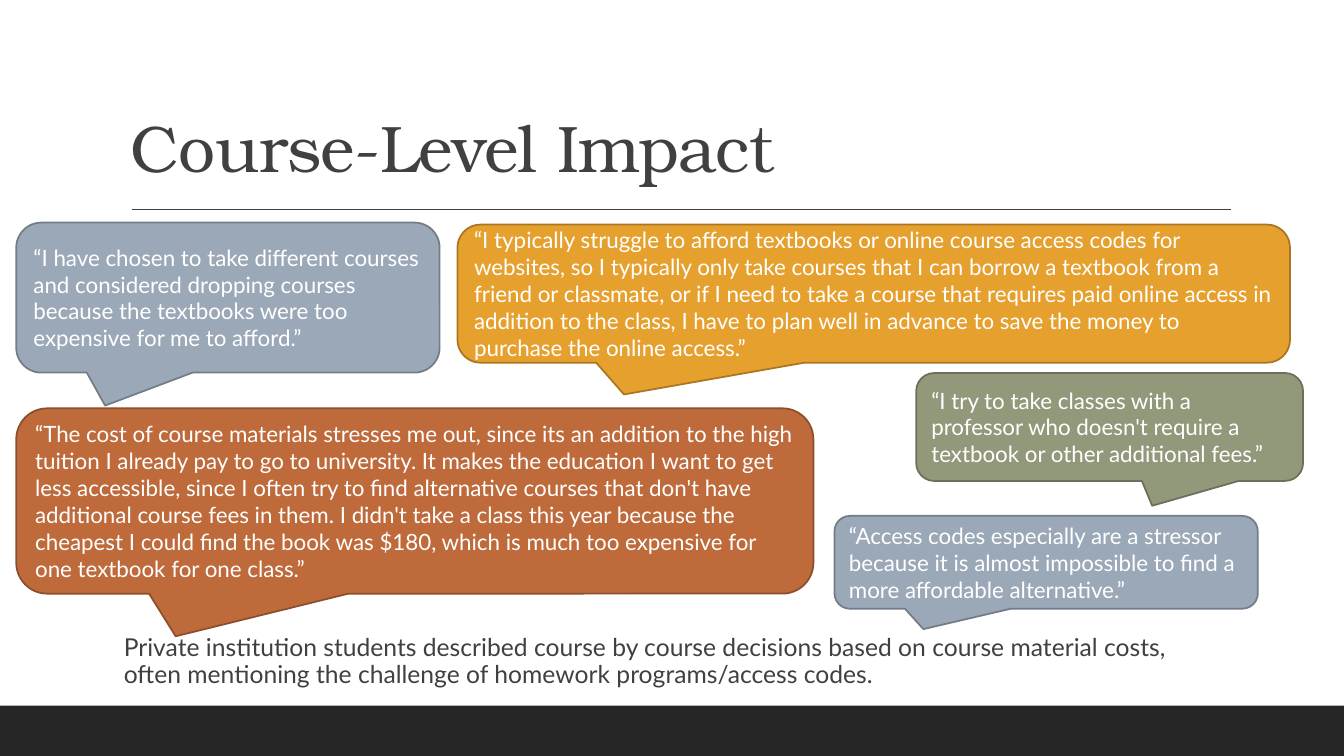
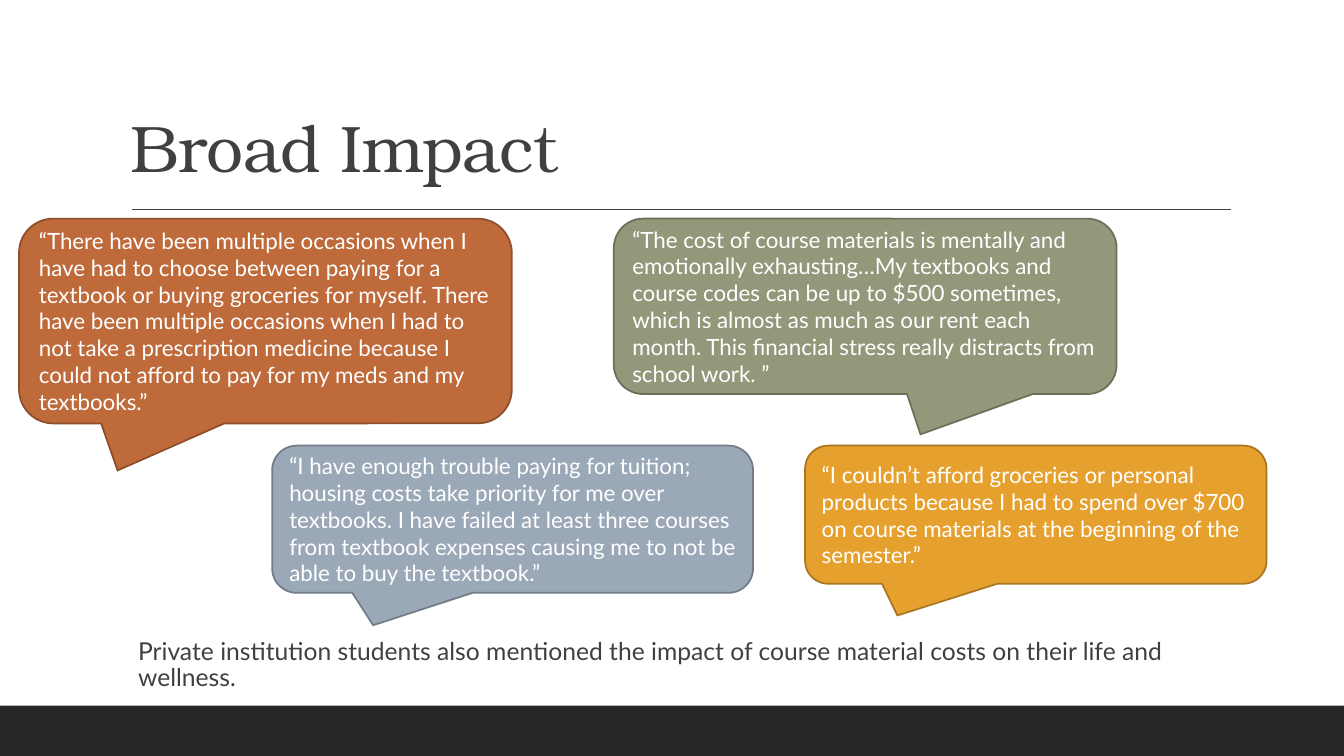
import dataclasses

import lxml.etree
import pptx
import pptx.dml.color
import pptx.enum.shapes
import pptx.enum.text
import pptx.oxml.ns
import pptx.util

Cm = pptx.util.Cm
Pt = pptx.util.Pt
SHAPES = pptx.enum.shapes.MSO_SHAPE
ANCHOR = pptx.enum.text.MSO_ANCHOR
ALIGN = pptx.enum.text.PP_ALIGN


@dataclasses.dataclass(frozen=True)
class Look:
    """Colours and tail position of one kind of quote callout."""
    fill: str
    outline: str
    tail_x: float
    tail_y: float


class Theme:
    band = "262626"
    ink = "404040"
    white = "FFFFFF"
    title_font = "TeX Gyre Bonum"
    text_font = "Lato"
    title_size = Pt(47)
    title_tracking = -50
    summary_size = Pt(17.6)
    quote_size = Pt(16)
    rule_width = Pt(1)
    outline_width = Pt(1.25)
    blue = Look("9BA8B7", "737C87", -0.29, 0.72)
    rust = Look("BF6A3B", "8D4E2C", -0.3, 0.73)
    gold = Look("E6A02E", "AA7622", -0.3, 0.73)
    green = Look("92987A", "6C705A", 0.11, 0.73)


SLIDE_SIZE = (33.87, 19.05)
BAND_BOX = (0, 17.78, 33.87, 1.27)
TITLE_BOX = (3.05, 0.79, 27.94, 4.04)
RULE_BOX = (3.33, 5.28, 27.68, 0)

SLIDES = [
    {
        "title": "Course-Level Impact",
        "summary": "Private institution students described course by course decisions based on "
                   "course material costs, often mentioning the challenge of homework "
                   "programs/access codes.",
        "summary_box": (2.87, 15.88, 27.94, 1.65),
        "quotes": [
            (Theme.green, (23.09, 9.4, 9.75, 2.72),
             "“I try to take classes with a professor who doesn't require a textbook or other "
             "additional fees.”"),
            (Theme.blue, (0.41, 5.61, 10.67, 3.78),
             "“I have chosen to take different courses and considered dropping courses because "
             "the textbooks were too expensive for me to afford.”"),
            (Theme.rust, (0.41, 10.29, 20.09, 4.67),
             "“The cost of course materials stresses me out, since its an addition to the high "
             "tuition I already pay to go to university. It makes the education I want to get "
             "less accessible, since I often try to find alternative courses that don't have "
             "additional course fees in them. I didn't take a class this year because the "
             "cheapest I could find the book was $180, which is much too expensive for one "
             "textbook for one class.”"),
            (Theme.gold, (11.53, 5.66, 20.98, 3.48),
             "“I typically struggle to afford textbooks or online course access codes for "
             "websites, so I typically only take courses that I can borrow a textbook from a "
             "friend or classmate, or if I need to take a course that requires paid online "
             "access in addition to the class, I have to plan well in advance to save the "
             "money to purchase the online access.”"),
            (Theme.blue, (21.03, 13, 10.67, 2.34),
             "“Access codes especially are a stressor because it is almost impossible to find "
             "a more affordable alternative.”"),
        ],
    },
    {
        "title": "Broad Impact",
        "summary": "Private institution students also mentioned the impact of course material "
                   "costs on their life and wellness.",
        "summary_box": (3.23, 15.98, 27.94, 1.65),
        "quotes": [
            (Theme.blue, (6.86, 11.23, 12.12, 3.71),
             "“I have enough trouble paying for tuition; housing costs take priority for me "
             "over textbooks. I have failed at least three courses from textbook expenses "
             "causing me to not be able to buy the textbook.”"),
            (Theme.rust, (0.48, 5.51, 12.42, 5.16),
             "“There have been multiple occasions when I have had to choose between paying for "
             "a textbook or buying groceries for myself. There have been multiple occasions "
             "when I had to not take a prescription medicine because I could not afford to pay "
             "for my meds and my textbooks.”"),
            (Theme.green, (15.47, 5.51, 12.67, 4.42),
             "“The cost of course materials is mentally and emotionally exhausting…My textbooks "
             "and course codes can be up to $500 sometimes, which is almost as much as our rent "
             "each month. This financial stress really distracts from school work. ”"),
            (Theme.gold, (20.29, 11.23, 11.63, 3.48),
             "“I couldn’t afford groceries or personal products because I had to spend over "
             "$700 on course materials at the beginning of the semester.”"),
        ],
    },
]


def lengths(box):
    return [Cm(value) for value in box]


def rgb(colour):
    return pptx.dml.color.RGBColor.from_string(colour)


def set_values(target, values):
    for name, value in values.items():
        setattr(target, name, value)


def write_text(shape, text, colour, font, anchor, line_spacing=1.0):
    """Fill a shape with one left-aligned paragraph and return its run."""
    frame = shape.text_frame
    set_values(frame, {"word_wrap": True, "vertical_anchor": anchor})
    paragraph = frame.paragraphs[0]
    set_values(paragraph, {"alignment": ALIGN.LEFT, "line_spacing": line_spacing})
    run = paragraph.add_run()
    run.text = text
    set_values(run.font, font)
    run.font.color.rgb = rgb(colour)
    return run


def add_filled_shape(slide, kind, box, colour):
    shape = slide.shapes.add_shape(kind, *lengths(box))
    shape.shadow.inherit = False
    shape.fill.solid()
    shape.fill.fore_color.rgb = rgb(colour)
    shape.line.fill.background()
    return shape


def add_rule(slide, box):
    left, top, width, height = lengths(box)
    rule = slide.shapes.add_connector(
        pptx.enum.shapes.MSO_CONNECTOR.STRAIGHT, left, top, left + width, top + height)
    rule.line.color.rgb = rgb(Theme.ink)
    rule.line.width = Theme.rule_width
    lxml.etree.SubElement(rule._element.spPr, pptx.oxml.ns.qn("a:effectLst"))


def add_title(slide, box, text):
    title = slide.shapes.add_textbox(*lengths(box))
    font = {"name": Theme.title_font, "size": Theme.title_size}
    run = write_text(title, text, Theme.ink, font, ANCHOR.BOTTOM, 0.9)
    run._r.get_or_add_rPr().set("spc", str(Theme.title_tracking))


def add_summary(slide, box, text):
    summary = slide.shapes.add_textbox(*lengths(box))
    font = {"name": Theme.text_font, "size": Theme.summary_size}
    write_text(summary, text, Theme.ink, font, ANCHOR.TOP, 0.9)
    summary.text_frame.margin_right = 0


def add_quote(slide, look, box, text):
    callout = add_filled_shape(slide, SHAPES.ROUNDED_RECTANGULAR_CALLOUT, box, look.fill)
    callout.adjustments[0] = look.tail_x
    callout.adjustments[1] = look.tail_y
    callout.line.color.rgb = rgb(look.outline)
    callout.line.width = Theme.outline_width
    font = {"name": Theme.text_font, "size": Theme.quote_size}
    write_text(callout, text, Theme.white, font, ANCHOR.MIDDLE)


def add_quote_slide(presentation, content):
    slide = presentation.slides.add_slide(presentation.slide_layouts[6])
    add_filled_shape(slide, SHAPES.RECTANGLE, BAND_BOX, Theme.band)
    add_rule(slide, RULE_BOX)
    add_title(slide, TITLE_BOX, content["title"])
    add_summary(slide, content["summary_box"], content["summary"])
    for look, box, text in content["quotes"]:
        add_quote(slide, look, box, text)


def main():
    presentation = pptx.Presentation()
    presentation.slide_width, presentation.slide_height = lengths(SLIDE_SIZE)
    for content in SLIDES:
        add_quote_slide(presentation, content)
    presentation.save("out.pptx")


if __name__ == "__main__":
    main()
